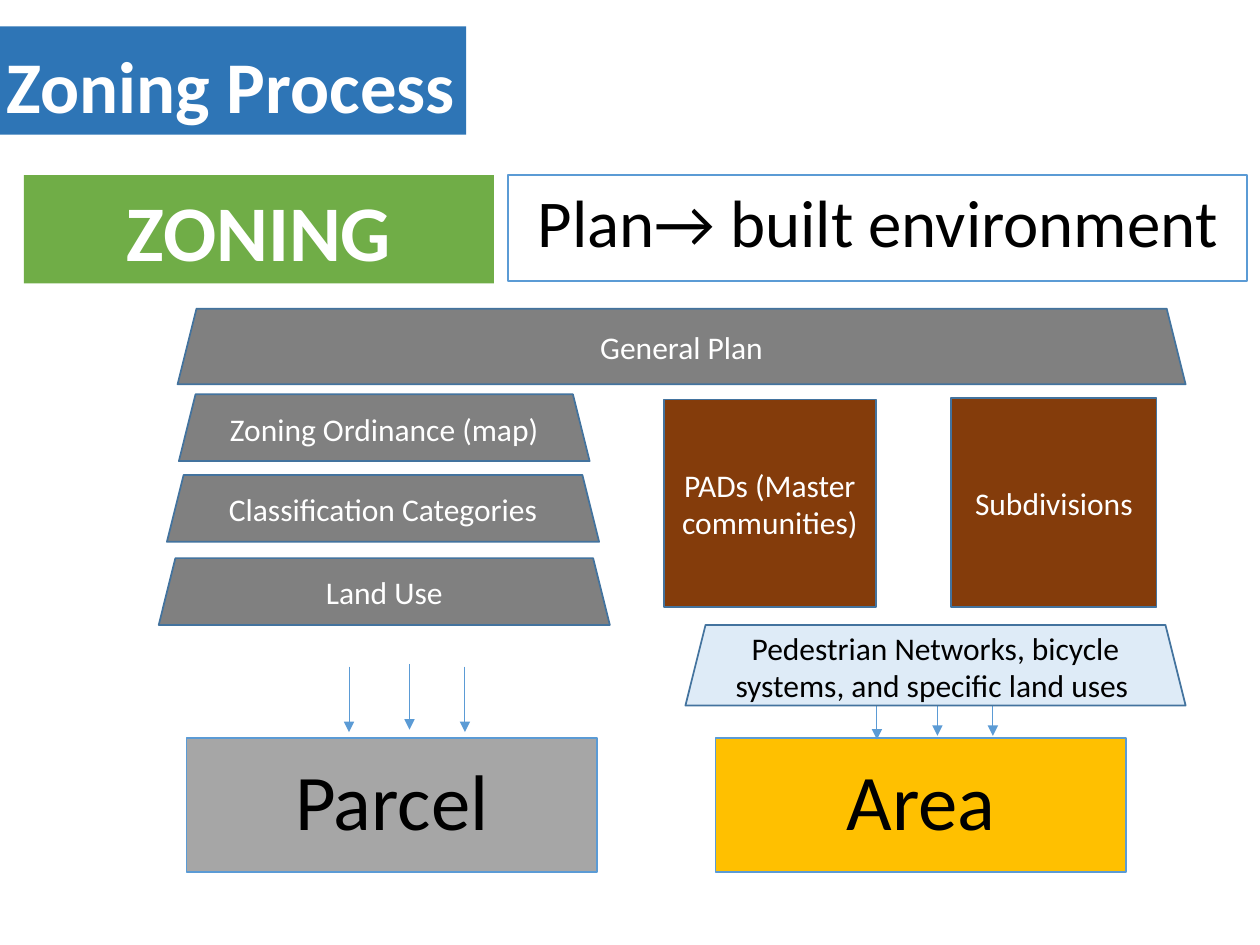
from lxml import etree
from pptx import Presentation
from pptx.dml.color import RGBColor
from pptx.enum.shapes import MSO_CONNECTOR, MSO_SHAPE
from pptx.enum.text import MSO_ANCHOR, PP_ALIGN
from pptx.oxml.ns import qn
from pptx.util import Inches, Pt

RECTANGLE = MSO_SHAPE.RECTANGLE
TRAPEZOID = MSO_SHAPE.TRAPEZOID
STRAIGHT = MSO_CONNECTOR.STRAIGHT
MIDDLE = MSO_ANCHOR.MIDDLE
BOTTOM = MSO_ANCHOR.BOTTOM
CENTER = PP_ALIGN.CENTER

WHITE = "FFFFFF"
BLACK = "000000"
BLUE = "5B9BD5"
STEEL = "43739E"
GRAY = "808080"
BROWN = "843C0B"
LAYER_HEIGHT = 0.53


def color(value):
    return RGBColor.from_string(value)


def add_block(slide, kind, box, text, size, fill, text_color, line=None):
    shape = slide.shapes.add_shape(kind, *(Inches(length) for length in box))
    shape.shadow.inherit = False
    shape.fill.solid()
    shape.fill.fore_color.rgb = color(fill)
    if line:
        shape.line.color.rgb = color(line)
        shape.line.width = Pt(1)
    else:
        shape.line.fill.background()
    frame = shape.text_frame
    frame.word_wrap = True
    frame.vertical_anchor = MIDDLE
    paragraph = frame.paragraphs[0]
    paragraph.text = text
    paragraph.alignment = CENTER
    paragraph.font.name = "Calibri"
    paragraph.font.size = Pt(size)
    paragraph.font.color.rgb = color(text_color)
    return shape


def add_label(slide, box, text, size, fill, text_color, line=None, spacing=0.9):
    shape = add_block(slide, RECTANGLE, box, text, size, fill, text_color, line)
    frame = shape.text_frame
    frame.margin_left = frame.margin_right = Inches(0.07)
    frame.margin_top = frame.margin_bottom = Inches(0.04)
    frame.paragraphs[0].line_spacing = spacing
    return shape


def add_banner(slide, box, text, size, fill):
    shape = add_label(slide, box, text, size, fill, WHITE)
    shape.text_frame.vertical_anchor = BOTTOM
    shape.text_frame.paragraphs[0].font.bold = True


def add_layer(slide, box, text, fill=GRAY, text_color=WHITE):
    return add_block(slide, TRAPEZOID, box, text, 18, fill, text_color, STEEL)


def add_heading(slide, left, top):
    add_banner(slide, (left, top, 3.73, 0.86), "Zoning Process", 41.6, "2E75B6")


def add_theme(slide, left, top):
    add_banner(slide, (left, top, 3.73, 0.86), "ZONING", 45, "70AD47")
    add_label(slide, (left + 3.84, top, 5.87, 0.84), "Plan→ built environment",
              38.2, WHITE, BLACK, BLUE, 0.8)


def add_parcel_layers(slide, center, top):
    layers = [
        ("Zoning Ordinance (map)", 0, 0, 3.26),
        ("Classification Categories", -0.01, 0.64, 3.43),
        ("Land Use", 0, 1.3, 3.58),
    ]
    for text, shift, drop, width in layers:
        box = (center + shift - width / 2, top + drop, width, LAYER_HEIGHT)
        add_layer(slide, box, text)


def add_area_layers(slide, left, top):
    columns = [
        ("PADs (Master communities)", (left, top + 0.01, 1.68, 1.65)),
        ("Subdivisions", (left + 2.28, top, 1.63, 1.66)),
    ]
    for text, box in columns:
        add_layer(slide, box, text, BROWN).adjustments[0] = 0
    add_layer(slide, (left + 0.17, top + 1.8, 3.97, 0.64),
              "Pedestrian Networks, bicycle systems, and specific land uses ",
              "DEEBF7", BLACK)


def add_arrows(slide, left, top, drops):
    group = slide.shapes.add_group_shape()
    for offset, drop in zip((0, 0.48, 0.92), drops):
        x, y = Inches(left + offset), Inches(top + drop)
        arrow = group.shapes.add_connector(STRAIGHT, x, y, x, y + Inches(0.52))
        arrow.line.color.rgb = color(BLUE)
        arrow.line.width = Pt(0.5)
        etree.SubElement(arrow.line._get_or_add_ln(), qn("a:tailEnd"), type="triangle")
        etree.SubElement(arrow._element.spPr, qn("a:effectLst"))


def add_outcome(slide, left, top, text, fill):
    add_label(slide, (left, top, 3.26, 1.06), text, 45, fill, BLACK, BLUE)


def main():
    presentation = Presentation()
    presentation.slide_width = Inches(10)
    presentation.slide_height = Inches(7.5)
    slide = presentation.slides.add_slide(presentation.slide_layouts[6])
    add_heading(slide, -0.03, 0.21)
    add_theme(slide, 0.19, 1.39)
    add_outcome(slide, 1.48, 5.86, "Parcel", "A6A6A6")
    add_outcome(slide, 5.68, 5.86, "Area", "FFC000")
    add_arrows(slide, 2.77, 5.27, (0.02, 0, 0.02))
    add_arrows(slide, 6.96, 5.32, (0.03, 0, 0))
    add_layer(slide, (1.41, 2.45, 8, 0.6), "General Plan")
    add_parcel_layers(slide, 3.05, 3.13)
    add_area_layers(slide, 5.27, 3.16)
    presentation.save("out.pptx")


if __name__ == "__main__":
    main()
